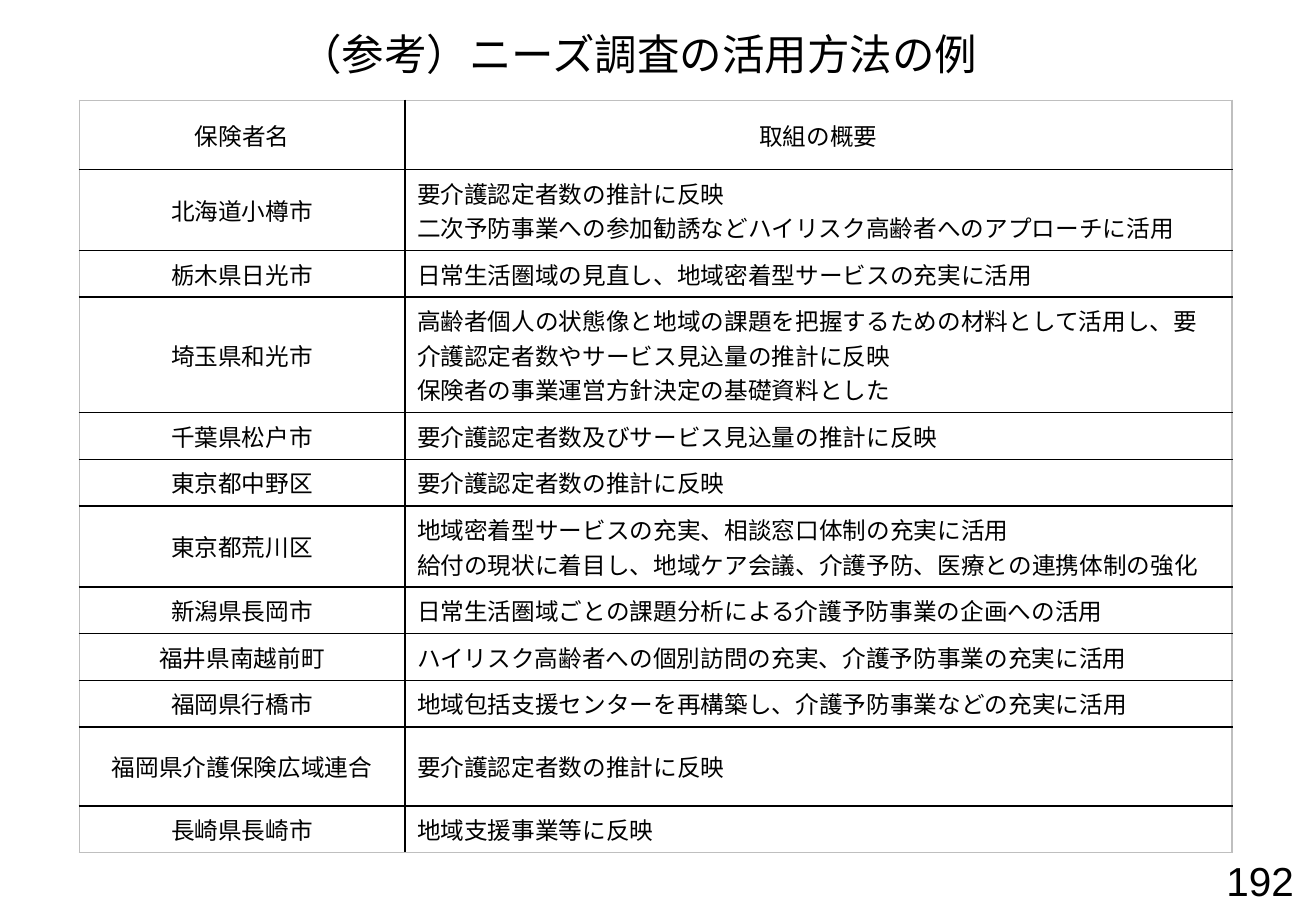
from lxml import etree
from pptx import Presentation
from pptx.dml.color import RGBColor
from pptx.enum.text import MSO_ANCHOR, PP_ALIGN
from pptx.oxml.ns import qn
from pptx.util import Pt

MIDDLE = MSO_ANCHOR.MIDDLE
LEFT, CENTER, RIGHT = PP_ALIGN.LEFT, PP_ALIGN.CENTER, PP_ALIGN.RIGHT
BLACK = RGBColor(0x00, 0x00, 0x00)
GRAY = RGBColor(0xBF, 0xBF, 0xBF)
LATIN, JAPANESE = "Arial", "Noto Sans CJK JP"

COL_WIDTHS = (193, 490.3)
HEADER = ("保険者名", "取組の概要")
# Row height, insurer, outline of its efforts
INSURERS = [
    (46.8, "北海道小樽市", "要介護認定者数の推計に反映\n二次予防事業への参加勧誘などハイリスク高齢者へのアプローチに活用"),
    (27.4, "栃木県日光市", "日常生活圏域の見直し、地域密着型サービスの充実に活用"),
    (66.2, "埼玉県和光市", "高齢者個人の状態像と地域の課題を把握するための材料として活用し、"
     "要介護認定者数やサービス見込量の推計に反映\n保険者の事業運営方針決定の基礎資料とした"),
    (27.4, "千葉県松戸市", "要介護認定者数及びサービス見込量の推計に反映"),
    (27.4, "東京都中野区", "要介護認定者数の推計に反映"),
    (46.8, "東京都荒川区", "地域密着型サービスの充実、相談窓口体制の充実に活用\n"
     "給付の現状に着目し、地域ケア会議、介護予防、医療との連携体制の強化"),
    (27.4, "新潟県長岡市", "日常生活圏域ごとの課題分析による介護予防事業の企画への活用"),
    (27.4, "福井県南越前町", "ハイリスク高齢者への個別訪問の充実、介護予防事業の充実に活用"),
    (27.4, "福岡県行橋市", "地域包括支援センターを再構築し、介護予防事業などの充実に活用"),
    (46.8, "福岡県介護保険広域連合", "要介護認定者数の推計に反映"),
    (27.4, "長崎県長崎市", "地域支援事業等に反映"),
]


def format_text(tf, size, font, align):
    for p in tf.paragraphs:
        p.alignment = align
        for r in p.runs:
            r.font.size = Pt(size)
            r.font.name = font
            r.font.color.rgb = BLACK
            ea = etree.SubElement(r._r.get_or_add_rPr(), qn("a:ea"))
            ea.set("typeface", JAPANESE)


def set_borders(cell, colors):
    """Draw the left, right, top and bottom borders in the given colours."""
    tcPr = cell._tc.get_or_add_tcPr()
    for i, (side, color) in enumerate(zip("LRTB", colors)):
        ln = etree.Element(qn(f"a:ln{side}"), w=str(Pt(1)))
        fill = etree.SubElement(ln, qn("a:solidFill"))
        etree.SubElement(fill, qn("a:srgbClr"), val=str(color))
        tcPr.insert(i, ln)


def add_title(s, left, top, width, height):
    title = s.shapes.title
    title.left, title.top = Pt(left), Pt(top)
    title.width, title.height = Pt(width), Pt(height)
    tf = title.text_frame
    tf.text = "（参考）ニーズ調査の活用方法の例"
    tf.vertical_anchor = MIDDLE
    format_text(tf, 25.2, JAPANESE, CENTER)


def add_insurer_table(s, left, top):
    heights = [41] + [height for height, _, _ in INSURERS]
    rows = [HEADER] + [(name, outline) for _, name, outline in INSURERS]
    table = s.shapes.add_table(len(rows), len(HEADER), Pt(left), Pt(top),
                               Pt(sum(COL_WIDTHS)), Pt(sum(heights))).table
    table.first_row = table.horz_banding = False
    for col, width in zip(table.columns, COL_WIDTHS):
        col.width = Pt(width)
    last = len(rows) - 1
    for i, texts in enumerate(rows):
        table.rows[i].height = Pt(heights[i])
        for j, text in enumerate(texts):
            cell = table.cell(i, j)
            cell.text_frame.text = text
            cell.vertical_anchor = MIDDLE
            cell.fill.background()
            if i == 0:
                cell.margin_left = cell.margin_right = cell.margin_top = Pt(0.7)
                cell.margin_bottom = Pt(0)
            format_text(cell.text_frame, 14, LATIN, LEFT if i and j else CENTER)
            on_edge = (j == 0, j == 1, i == 0, i == last)
            set_borders(cell, [GRAY if edge else BLACK for edge in on_edge])


def add_page_number(s, left, top, width, height):
    tf = s.shapes.add_textbox(Pt(left), Pt(top), Pt(width), Pt(height)).text_frame
    tf.word_wrap = True
    tf.vertical_anchor = MIDDLE
    tf.text = "192"
    format_text(tf, 24, LATIN, RIGHT)


def main():
    prs = Presentation()
    prs.slide_width, prs.slide_height = Pt(780), Pt(540)
    s = prs.slides.add_slide(prs.slide_layouts[5])
    add_title(s, 27.4, 15, 702, 33)
    add_insurer_table(s, 47, 59.5)
    add_page_number(s, 718.6, 507.6, 55.4, 28.8)
    prs.save("out.pptx")


if __name__ == "__main__":
    main()
